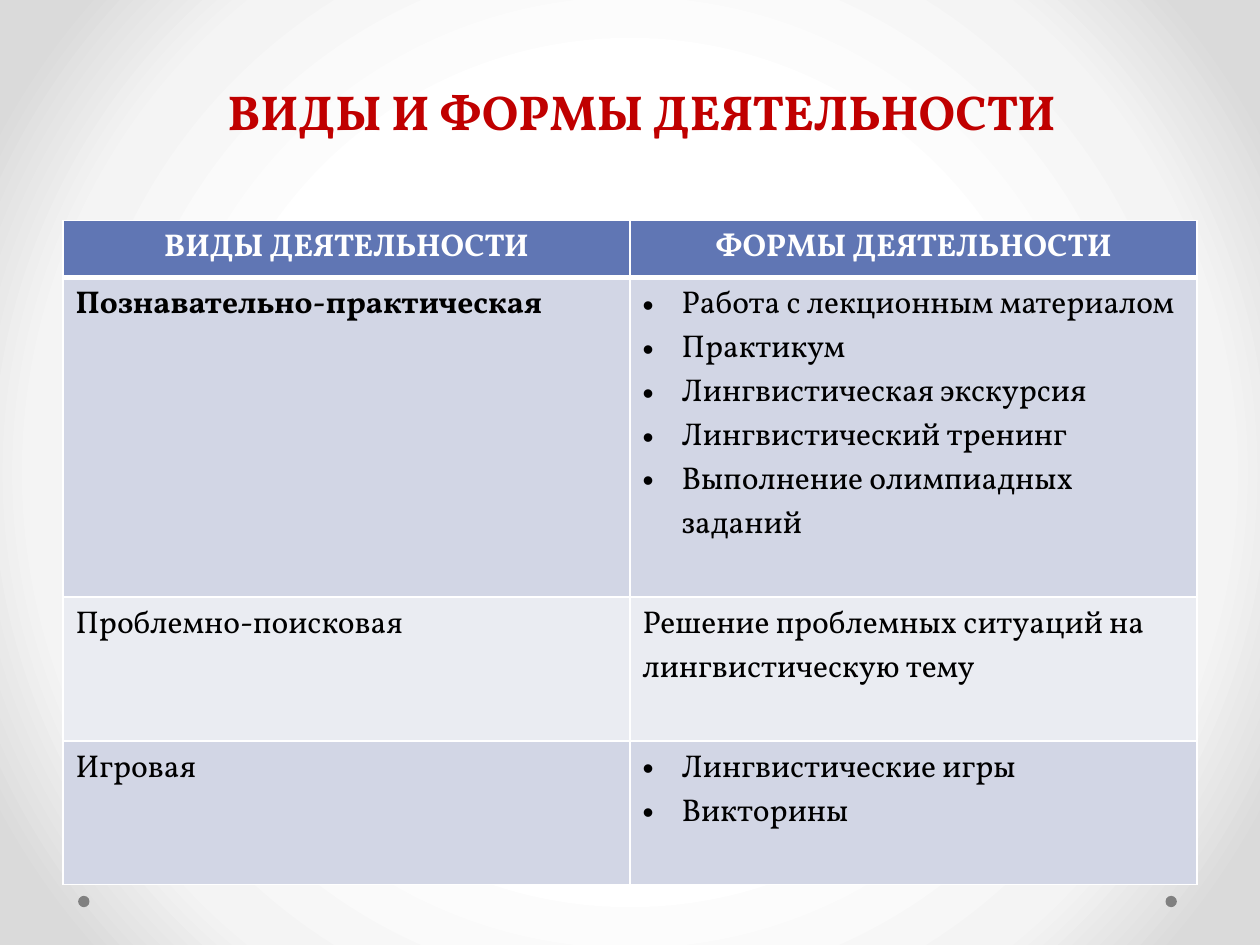
from pptx import Presentation
from pptx.dml.color import RGBColor
from pptx.enum.shapes import MSO_SHAPE
from pptx.enum.text import MSO_ANCHOR, PP_ALIGN
from pptx.oxml import parse_xml
from pptx.oxml.ns import nsdecls
from pptx.util import Inches, Pt

OVAL = MSO_SHAPE.OVAL
BOTTOM = MSO_ANCHOR.BOTTOM
LEFT, CENTER = PP_ALIGN.LEFT, PP_ALIGN.CENTER

FONT = "Vollkorn"
WHITE, BLACK, RED, GRAY = "FFFFFF", "000000", "C00000", "808080"
HEADER_FILL, BAND_FILLS = "6076B4", ("D2D6E5", "EAECF2")
BACKDROP_STOPS = ((50, "FFFFFF"), (76, "F4F4F4"), (92, "DADADA"))

HEADINGS = ("ВИДЫ ДЕЯТЕЛЬНОСТИ", "ФОРМЫ ДЕЯТЕЛЬНОСТИ")
ACTIVITIES = (
    ("Познавательно-практическая", (
        "Работа с лекционным материалом",
        "Практикум",
        "Лингвистическая экскурсия",
        "Лингвистический тренинг",
        "Выполнение олимпиадных заданий",
    )),
    ("Проблемно-поисковая", ("Решение проблемных ситуаций на лингвистическую тему",)),
    ("Игровая", ("Лингвистические игры", "Викторины")),
)
ROW_HEIGHTS = (0.45, 2.54, 1.14, 1.14)


def rgb(value):
    return RGBColor.from_string(value)


def write(frame, lines, size=18, color=BLACK, bold=False, align=LEFT,
          spacing=None, bulleted=False):
    frame.word_wrap = True
    for index, line in enumerate(lines):
        paragraph = frame.paragraphs[0] if index == 0 else frame.add_paragraph()
        paragraph.alignment = align
        if spacing:
            paragraph.line_spacing = Pt(spacing)
        if bulleted:
            properties = paragraph._p.get_or_add_pPr()
            properties.set("marL", str(Inches(0.31)))
            properties.set("indent", str(-Inches(0.31)))
            properties.append(parse_xml(f'<a:buFont {nsdecls("a")} typeface="Arial"/>'))
            properties.append(parse_xml(f'<a:buChar {nsdecls("a")} char="•"/>'))
        run = paragraph.add_run()
        run.text = line
        run.font.name = FONT
        run.font.size = Pt(size)
        run.font.bold = bold
        run.font.color.rgb = rgb(color)


def paint_backdrop(slide):
    stops = "".join(
        f'<a:gs pos="{position * 1000}"><a:srgbClr val="{color}"/></a:gs>'
        for position, color in BACKDROP_STOPS)
    slide.element.cSld.insert(0, parse_xml(
        f'<p:bg {nsdecls("p", "a")}><p:bgPr><a:gradFill rotWithShape="1">'
        f'<a:gsLst>{stops}</a:gsLst><a:path path="circle">'
        '<a:fillToRect l="50000" t="50000" r="50000" b="50000"/></a:path>'
        '</a:gradFill><a:effectLst/></p:bgPr></p:bg>'))


def add_dot(slide, left, top, size):
    dot = slide.shapes.add_shape(OVAL, Inches(left), Inches(top), Inches(size), Inches(size))
    dot.shadow.inherit = False
    dot.fill.solid()
    dot.fill.fore_color.rgb = rgb(GRAY)
    dot.line.fill.background()


def add_title(slide, left, top, width, height):
    title = slide.shapes.add_textbox(Inches(left), Inches(top), Inches(width), Inches(height))
    title.text_frame.vertical_anchor = BOTTOM
    write(title.text_frame, ["ВИДЫ И ФОРМЫ ДЕЯТЕЛЬНОСТИ"], size=28, color=RED,
          bold=True, align=CENTER, spacing=58)


def style_cell(cell, fill, top_width=1, bottom_width=1):
    cell.fill.solid()
    cell.fill.fore_color.rgb = rgb(fill)
    edges = (("L", 1), ("R", 1), ("T", top_width), ("B", bottom_width))
    for index, (side, width) in enumerate(edges):
        cell._tc.get_or_add_tcPr().insert(index, parse_xml(
            f'<a:ln{side} {nsdecls("a")} w="{Pt(width)}"><a:solidFill>'
            f'<a:srgbClr val="{WHITE}"/></a:solidFill></a:ln{side}>'))


def add_activity_table(slide, left, top, width):
    table = slide.shapes.add_table(
        len(ROW_HEIGHTS), len(HEADINGS), Inches(left), Inches(top),
        Inches(width), Inches(sum(ROW_HEIGHTS))).table
    for row, height in zip(table.rows, ROW_HEIGHTS):
        row.height = Inches(height)
    for column, heading in enumerate(HEADINGS):
        cell = table.cell(0, column)
        style_cell(cell, HEADER_FILL, bottom_width=3)
        write(cell.text_frame, [heading], color=WHITE, bold=True, align=CENTER)
    for index, (activity, forms) in enumerate(ACTIVITIES):
        kind_cell, forms_cell = table.rows[index + 1].cells
        for cell in (kind_cell, forms_cell):
            style_cell(cell, BAND_FILLS[index % 2], top_width=3 if index == 0 else 1)
        write(kind_cell.text_frame, [activity], bold=index == 0)
        write(forms_cell.text_frame, forms, bulleted=len(forms) > 1)


def main():
    presentation = Presentation()
    presentation.slide_width = Inches(10)
    presentation.slide_height = Inches(7.5)
    slide = presentation.slides.add_slide(presentation.slide_layouts[6])
    paint_backdrop(slide)
    for left in (9.25, 0.62):
        add_dot(slide, left, 7.11, 0.09)
    add_title(slide, 0.59, 0.29, 9, 0.87)
    add_activity_table(slide, 0.5, 1.75, 9)
    presentation.save("out.pptx")


if __name__ == "__main__":
    main()
